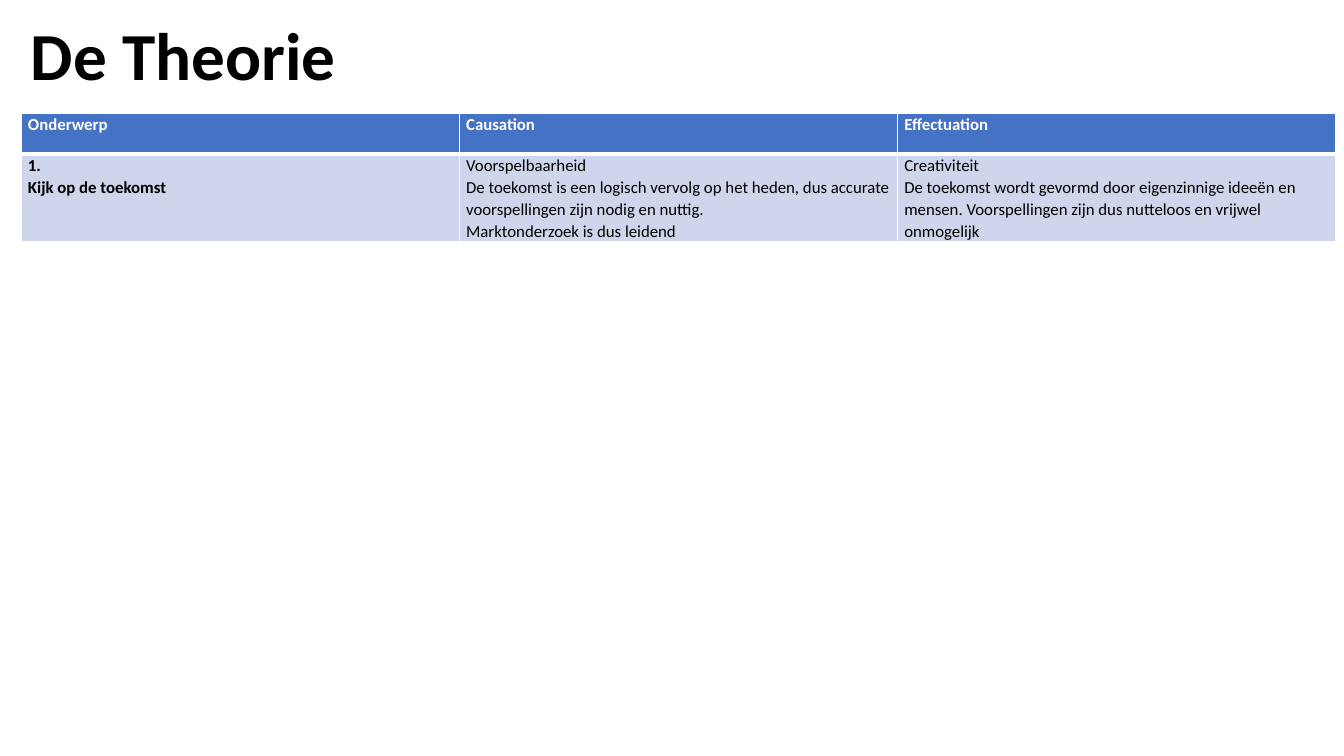
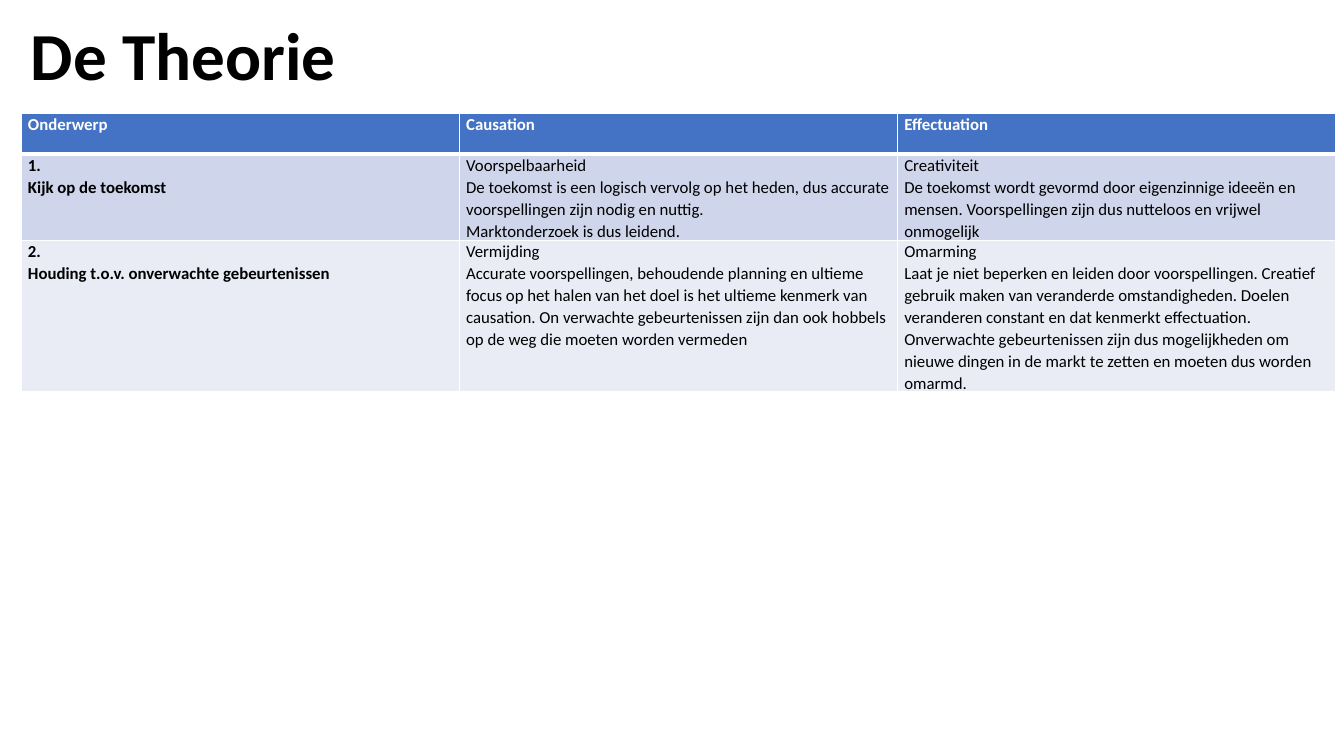
from dataclasses import dataclass

from lxml import etree
from pptx import Presentation
from pptx.dml.color import RGBColor
from pptx.enum import shapes, text
from pptx.oxml import ns
from pptx.util import Pt

TITLE = "De Theorie"
HEADER = [["Onderwerp"], ["Causation"], ["Effectuation"]]


def outlook_row(closing):
    return [
        ["1.", "Kijk op de toekomst"],
        [
            "Voorspelbaarheid",
            "De toekomst is een logisch vervolg op het heden, dus accurate voorspellingen zijn nodig en nuttig.",
            closing,
        ],
        [
            "Creativiteit",
            "De toekomst wordt gevormd door eigenzinnige ideeën en mensen. "
            "Voorspellingen zijn dus nutteloos en vrijwel onmogelijk",
        ],
    ]


ATTITUDE_ROW = [
    ["2.", "Houding t.o.v. onverwachte gebeurtenissen"],
    [
        "Vermijding",
        "Accurate voorspellingen, behoudende planning en ultieme focus op het halen van het doel "
        "is het ultieme kenmerk van causation. On verwachte gebeurtenissen zijn dan ook hobbels "
        "op de weg die moeten worden vermeden",
    ],
    [
        "Omarming",
        "Laat je niet beperken en leiden door voorspellingen. Creatief gebruik maken van veranderde "
        "omstandigheden. Doelen veranderen constant en dat kenmerkt effectuation. Onverwachte "
        "gebeurtenissen zijn dus mogelijkheden om nieuwe dingen in de markt te zetten en moeten "
        "dus worden omarmd.",
    ],
]

SLIDES = [
    [HEADER, outlook_row("Marktonderzoek is dus leidend")],
    [HEADER, outlook_row("Marktonderzoek is dus leidend."), ATTITUDE_ROW],
]


@dataclass(frozen=True)
class Theme:
    font: str = "Calibri"
    white: str = "FFFFFF"
    black: str = "000000"
    header: str = "4472C4"
    bands: tuple = ("CFD5EA", "E9EBF5")
    title_size: int = 48
    table_size: int = 12
    line_spacing: float = 1.07
    thin: int = 1
    thick: int = 3


THEME = Theme()
LEFT = 15
TITLE_TOP, TITLE_WIDTH, TITLE_HEIGHT = 6, 234, 65.5
TABLE_TOP, COLUMN_WIDTH, ROW_HEIGHT, CELL_INSET = 80.7, 313, 29.5, 5


def style_runs(paragraph, size, color, bold):
    for run in paragraph.runs:
        run.font.name = THEME.font
        run.font.size = Pt(size)
        run.font.bold = bold
        run.font.color.rgb = RGBColor.from_string(color)
    for line_break in paragraph._p.findall(ns.qn("a:br")):
        etree.SubElement(line_break, ns.qn("a:rPr"), sz=str(size * 100))


def set_borders(cell, widths):
    properties = cell._tc.get_or_add_tcPr()
    for side, width in widths.items():
        line = etree.SubElement(properties, ns.qn(f"a:ln{side}"), w=str(Pt(width)))
        fill = etree.SubElement(line, ns.qn("a:solidFill"))
        etree.SubElement(fill, ns.qn("a:srgbClr"), val=THEME.white)


def fill_cell(cell, lines, row, column):
    is_header = row == 0
    cell.margin_left = cell.margin_right = Pt(CELL_INSET)
    cell.margin_top = cell.margin_bottom = Pt(0)
    set_borders(cell, {
        "L": THEME.thin,
        "R": THEME.thin,
        "T": THEME.thick if row == 1 else THEME.thin,
        "B": THEME.thick if is_header else THEME.thin,
    })
    cell.fill.solid()
    background = THEME.header if is_header else THEME.bands[(row - 1) % 2]
    cell.fill.fore_color.rgb = RGBColor.from_string(background)
    paragraph = cell.text_frame.paragraphs[0]
    paragraph.text = "\v".join(lines)
    paragraph.line_spacing = THEME.line_spacing
    color = THEME.white if is_header else THEME.black
    style_runs(paragraph, THEME.table_size, color, is_header or column == 0)


def add_theory_table(slide, rows):
    columns = len(HEADER)
    table = slide.shapes.add_table(
        len(rows), columns, Pt(LEFT), Pt(TABLE_TOP),
        Pt(COLUMN_WIDTH * columns), Pt(ROW_HEIGHT * len(rows)),
    ).table
    for row, cells in enumerate(rows):
        table.rows[row].height = Pt(ROW_HEIGHT)
        for column, lines in enumerate(cells):
            fill_cell(table.cell(row, column), lines, row, column)


def add_title(slide):
    shape = slide.shapes.add_shape(
        shapes.MSO_SHAPE.RECTANGLE, Pt(LEFT), Pt(TITLE_TOP), Pt(TITLE_WIDTH), Pt(TITLE_HEIGHT)
    )
    shape.shadow.inherit = False
    shape.fill.solid()
    shape.fill.fore_color.rgb = RGBColor.from_string(THEME.white)
    shape.line.fill.background()
    frame = shape.text_frame
    frame.text = TITLE
    frame.word_wrap = False
    frame.auto_size = text.MSO_AUTO_SIZE.SHAPE_TO_FIT_TEXT
    frame.vertical_anchor = text.MSO_ANCHOR.TOP
    paragraph = frame.paragraphs[0]
    paragraph.alignment = text.PP_ALIGN.LEFT
    style_runs(paragraph, THEME.title_size, THEME.black, True)


def main():
    presentation = Presentation()
    presentation.slide_width, presentation.slide_height = Pt(960), Pt(540)
    for rows in SLIDES:
        slide = presentation.slides.add_slide(presentation.slide_layouts[6])
        add_theory_table(slide, rows)
        add_title(slide)
    presentation.save("out.pptx")


if __name__ == "__main__":
    main()
